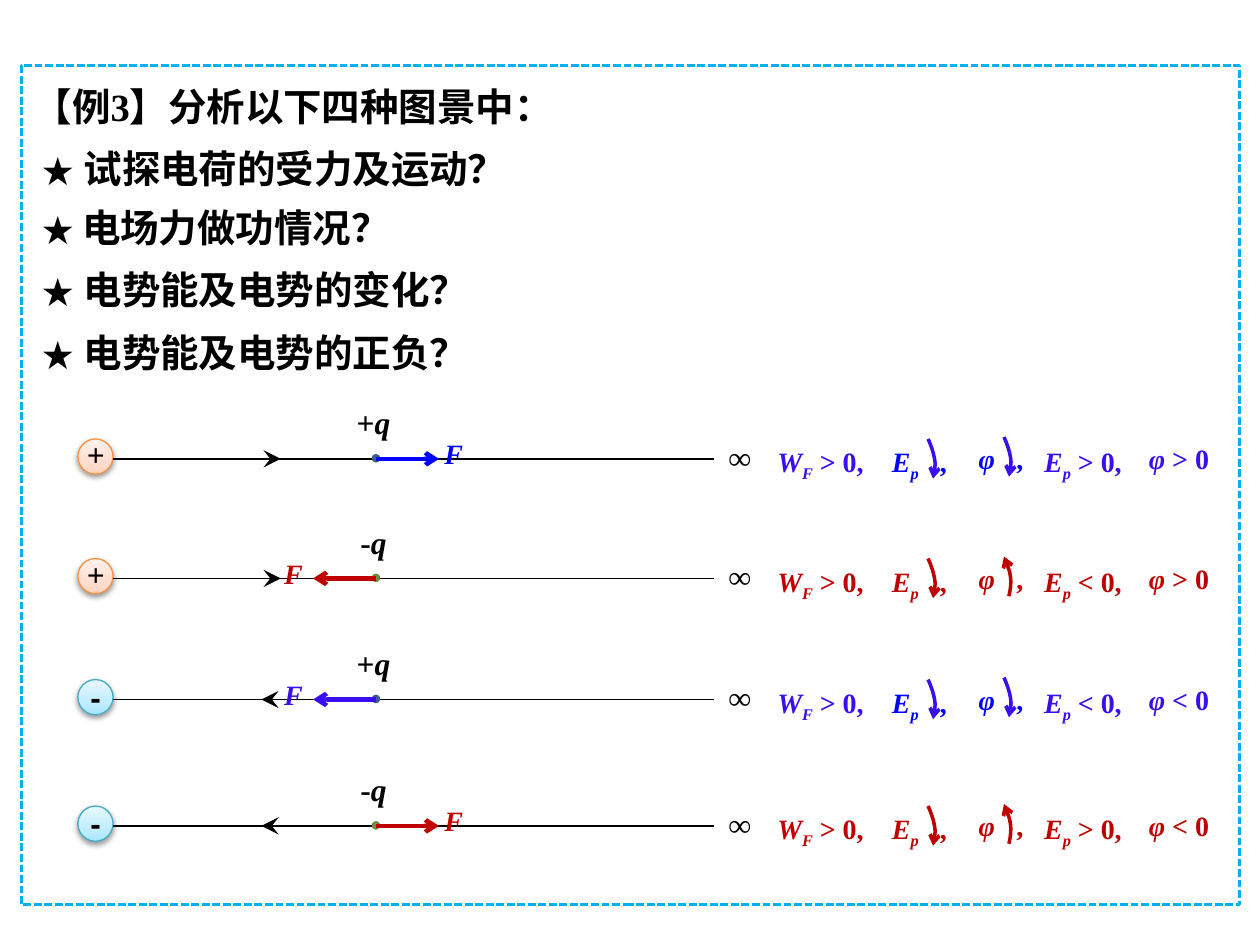
from dataclasses import dataclass

from lxml.etree import SubElement
from pptx import Presentation
from pptx.dml.color import RGBColor
from pptx.enum.dml import MSO_LINE
from pptx.enum.shapes import MSO_CONNECTOR, MSO_SHAPE
from pptx.enum.text import MSO_ANCHOR, PP_ALIGN
from pptx.oxml.ns import qn
from pptx.util import Cm, Pt


@dataclass(frozen=True)
class Theme:
    black: str = "000000"
    blue: str = "0000FF"
    violet: str = "390EF0"
    red: str = "C00000"
    frame: str = "00B0F0"
    positive: tuple = ("F69240", "FFD2BD", "FFDED0", "FFF2ED")
    negative: tuple = ("46AAC5", "A7E6FF", "C1EDFF", "E7F8FF")
    plus_probe: tuple = ("4F81BD", "3A5F8C")
    minus_probe: tuple = ("9BBB59", "738A42")
    serif: str = "Times New Roman"
    sans: str = "Arial"
    heading: int = 22
    label: int = 18
    formula: int = 16


@dataclass(frozen=True)
class Case:
    wire: float
    source: str
    probe: str
    push: int
    force: str
    result: str
    trend: str
    phi_rises: bool
    energy: str
    potential: str


THEME = Theme()
QUESTIONS = [
    ("试探电荷的受力及运动？", 24),
    ("电场力做功情况？", 20),
    ("电势能及电势的变化？", 24),
    ("电势能及电势的正负？", 24),
]
CASES = [
    Case(9.25, "+", "+", 1, THEME.blue, THEME.violet, THEME.blue, False, ">", ">"),
    Case(11.66, "+", "-", -1, THEME.red, THEME.red, THEME.red, True, "<", ">"),
    Case(14.1, "-", "+", -1, THEME.violet, THEME.violet, THEME.blue, False, "<", "<"),
    Case(16.65, "-", "-", 1, THEME.red, THEME.red, THEME.red, True, ">", "<"),
]


def rgb(colour):
    return RGBColor.from_string(colour)


def add_run(line, words, size, colour=THEME.black, face=THEME.serif, style=""):
    run = line.add_run()
    run.text = words
    run.font.size, run.font.name, run.font.bold = Pt(size), face, True
    run.font.italic = "i" in style
    run.font.color.rgb = rgb(colour)
    if "s" in style:
        run.font._element.set("baseline", "-25000")


def add_label(slide, x, y, width, words, face=THEME.serif):
    box = slide.shapes.add_textbox(Cm(x), Cm(y), Cm(width), Cm(1.02))
    box.text_frame.word_wrap = False
    line = box.text_frame.paragraphs[0]
    line.alignment = PP_ALIGN.CENTER
    for part, style in words:
        add_run(line, part, THEME.label, face=face, style=style)


def add_formula(slide, x, y, width, words, colour, tab=None, spaced=True):
    box = slide.shapes.add_textbox(Cm(x), Cm(y), Cm(width), Cm(1.04))
    box.text_frame.word_wrap = True
    line = box.text_frame.paragraphs[0]
    if spaced:
        box.text_frame.margin_top = Cm(0.24)
        line.line_spacing = 1.25
    if tab:
        stops = SubElement(line._p.get_or_add_pPr(), qn("a:tabLst"))
        SubElement(stops, qn("a:tab"), pos=str(Cm(tab)), algn="l")
    for part, style in words:
        add_run(line, part, THEME.formula, colour, style=style)


def style_stroke(stroke, colour, width, end=None, kind="arrow", size="med"):
    stroke.line.color.rgb = rgb(colour)
    stroke.line.width = Pt(width)
    if end:
        SubElement(stroke.element.spPr.get_or_add_ln(), qn(f"a:{end}"), type=kind, w=size, len=size)


def add_line(slide, x1, x2, y, colour, width, **arrow):
    line = slide.shapes.add_connector(MSO_CONNECTOR.STRAIGHT, Cm(x1), Cm(y), Cm(x2), Cm(y))
    style_stroke(line, colour, width, **arrow)
    SubElement(line.element.spPr, qn("a:effectLst"))


def add_trend_arrow(slide, x, y, colour, rises):
    """Draw a bent arrow from two cubic curves, pointing up or down."""
    bends = [(0.13, 0.66), (0.15, 0.53), (0.13, 0.4), (0.11, 0.28), (0.06, 0.13), (0, 0)]
    builder = slide.shapes.build_freeform(Cm(x + 0.1), Cm(y + 0.8))
    builder.add_line_segments([(Cm(x + dx), Cm(y + dy)) for dx, dy in bends], close=False)
    arrow = builder.convert_to_shape()
    segments = list(arrow.element.iter(qn("a:lnTo")))
    outline = segments[0].getparent()
    for start in range(0, len(segments), 3):
        curve = SubElement(outline, qn("a:cubicBezTo"))
        for segment in segments[start:start + 3]:
            curve.append(segment[0])
            outline.remove(segment)
    arrow.fill.background()
    arrow.shadow.inherit = False
    style_stroke(arrow, colour, 2, "tailEnd" if rises else "headEnd")


def add_circle(slide, x, y, size, edge, width):
    circle = slide.shapes.add_shape(MSO_SHAPE.OVAL, Cm(x), Cm(y), Cm(size), Cm(size))
    circle.shadow.inherit = False
    style_stroke(circle, edge, width)
    return circle


def add_source(slide, case):
    positive = case.source == "+"
    edge, *tints = THEME.positive if positive else THEME.negative
    circle = add_circle(slide, 1.57, case.wire - 0.4, 0.71, edge, 0.75)
    circle.fill.gradient()
    circle.fill.gradient_angle = 90
    stops = circle.element.spPr.find(".//" + qn("a:gsLst"))
    stops[:] = []
    for position, tint in zip((0, 35000, 100000), tints):
        stop = SubElement(stops, qn("a:gs"), pos=str(position))
        SubElement(stop, qn("a:srgbClr"), val=tint)
    effects = circle.element.spPr.find(qn("a:effectLst"))
    shadow = SubElement(effects, qn("a:outerShdw"), blurRad=str(Pt(3.1)), dist=str(Pt(1.6)),
                        dir="5400000", rotWithShape="0")
    tone = SubElement(shadow, qn("a:srgbClr"), val=THEME.black)
    SubElement(tone, qn("a:alpha"), val="38000")
    add_label(slide, 1.5, case.wire - (0.6 if positive else 0.56), 0.86, [(case.source, "")],
              THEME.serif if positive else THEME.sans)


def add_field(slide, case):
    near, far = 2.27, 14.4
    start, tip, rest, end = (near, 5.66, 4.32, far) if case.source == "+" else (far, 5.27, 5.66, near)
    add_line(slide, start, tip, case.wire, THEME.black, 1, end="tailEnd", kind="stealth", size="lg")
    add_line(slide, rest, end, case.wire, THEME.black, 1)
    add_label(slide, 14.43, case.wire - 0.55, 0.97, [("∞", "")])


def add_probe(slide, case):
    fill, edge = THEME.plus_probe if case.probe == "+" else THEME.minus_probe
    dot = add_circle(slide, 7.53, case.wire - 0.06, 0.1, edge, 2)
    dot.fill.solid()
    dot.fill.fore_color.rgb = rgb(fill)
    add_label(slide, 6.91, case.wire - 1.25, 1.24, [(case.probe, ""), ("q", "i")])
    add_line(slide, 7.58, 7.58 + 1.27 * case.push, case.wire, case.force, 2.5, end="tailEnd")
    add_formula(slide, 8.71 if case.push > 0 else 5.48, case.wire - 0.57, 1.6, [("F", "i")],
                case.force, spaced=False)


def add_results(slide, case):
    top = case.wire - 0.72
    energy = [("E", "i"), ("p", "is")]
    add_formula(slide, 15.42, top, 2.64, [("W", "i"), ("F", "is"), (" > 0,", "")], case.result)
    add_formula(slide, 17.73, top, 2.13, energy + [("\t,", "")], case.trend, tab=0.97)
    add_trend_arrow(slide, 18.71, case.wire - 0.4, case.result, False)
    add_formula(slide, 19.48, top - 0.03, 1.78, [("φ", "i"), ("\t,", "")], case.trend, tab=0.76)
    add_trend_arrow(slide, 20.24, case.wire - 0.44, case.result, case.phi_rises)
    add_formula(slide, 20.8, top, 2.64, energy + [(f" {case.energy} 0,", "")], case.result)
    add_formula(slide, 22.91, top - 0.03, 2.64, [("φ", "i"), (f" {case.potential} 0", "")], case.result)


def add_problem(slide):
    frame = slide.shapes.add_shape(MSO_SHAPE.RECTANGLE, Cm(0.43), Cm(1.32), Cm(24.56), Cm(16.92))
    frame.fill.background()
    frame.shadow.inherit = False
    style_stroke(frame, THEME.frame, 1.5)
    frame.line.dash_style = MSO_LINE.SQUARE_DOT
    body = frame.text_frame
    body.vertical_anchor, body.word_wrap = MSO_ANCHOR.TOP, True
    title = body.paragraphs[0]
    add_run(title, "【例3】分析以下四种图景中：", THEME.heading)
    for question, gap in QUESTIONS:
        line = body.add_paragraph()
        line._p.get_or_add_pPr().set("marL", str(Cm(0.18)))
        add_run(line, "★", THEME.label)
        add_run(line, " ", gap)
        add_run(line, question, THEME.heading)
    for line in body.paragraphs:
        line.alignment, line.line_spacing = PP_ALIGN.LEFT, 1.25


def main():
    deck = Presentation()
    deck.slide_width, deck.slide_height = Cm(25.4), Cm(19.05)
    slide = deck.slides.add_slide(deck.slide_layouts[6])
    add_problem(slide)
    for case in CASES:
        for add_part in (add_source, add_field, add_probe, add_results):
            add_part(slide, case)
    deck.save("out.pptx")


if __name__ == "__main__":
    main()
